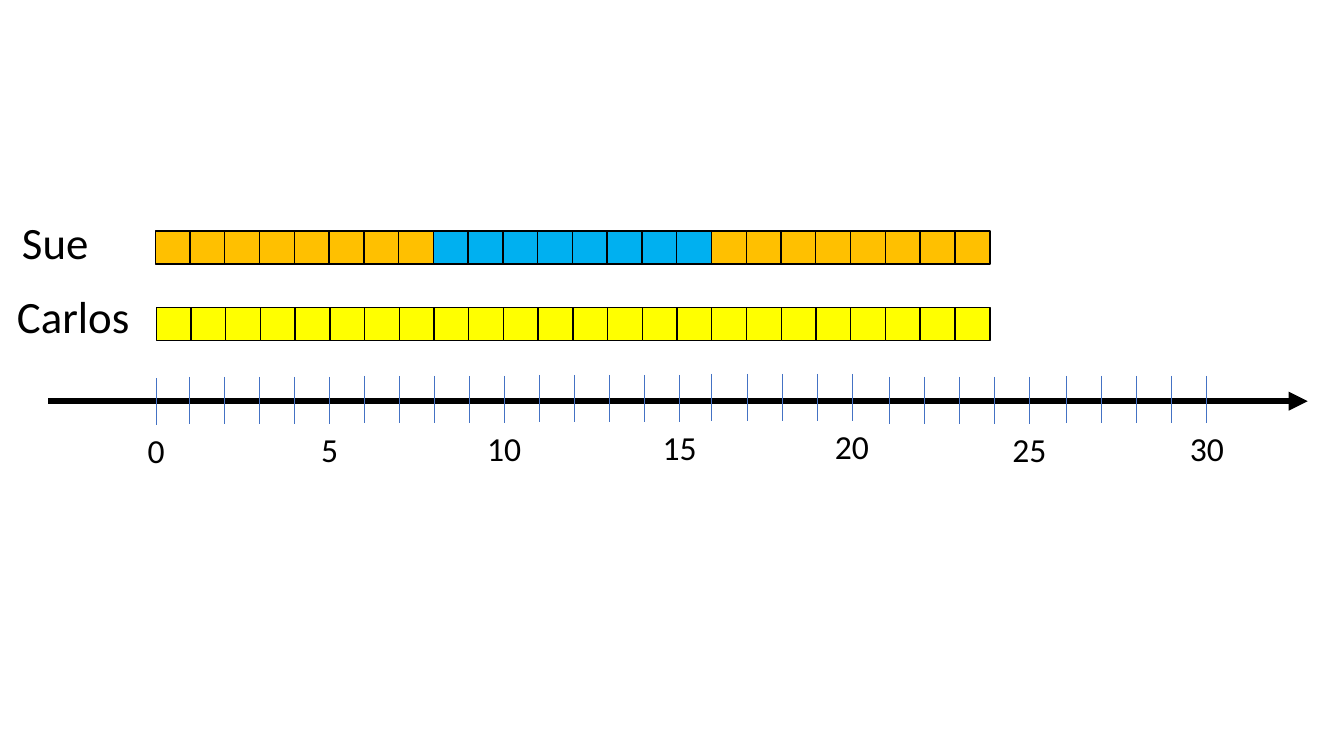
import pptx
import pptx.util
import lxml.etree
from pptx.dml.color import RGBColor
from pptx.enum.shapes import MSO_CONNECTOR, MSO_SHAPE
from pptx.enum.text import MSO_AUTO_SIZE, PP_ALIGN
from pptx.oxml.ns import qn
from pptx.util import Inches

BLACK = RGBColor(0x00, 0x00, 0x00)
TICK_BLUE = RGBColor(0x44, 0x72, 0xC4)
ORANGE = RGBColor(0xFF, 0xC0, 0x00)
SKY_BLUE = RGBColor(0x00, 0xB0, 0xF0)
YELLOW = RGBColor(0xFF, 0xFF, 0x00)
FONT = "Calibri"

# Content: name, label box, first and last square left, row top, (colour, count) runs
ROWS = [
    ("Carlos", (0.07, 2.82, 1.36, 0.64), 1.55, 9.47, 3.05, [(YELLOW, 24)]),
    ("Sue", (0.12, 2.08, 1.14, 0.64), 1.54, 9.47, 2.29,
     [(ORANGE, 8), (SKY_BLUE, 8), (ORANGE, 8)]),
]
# Tick groups: left and top of the first tick, number of ticks, number under the last
TICK_GROUPS = [
    (1.55, 3.75, 1, "0"),
    (1.88, 3.74, 5, "5"),
    (3.61, 3.73, 5, "10"),
    (5.35, 3.72, 5, "15"),
    (7.06, 3.71, 5, "20"),
    (8.82, 3.74, 5, "25"),
    (10.58, 3.73, 5, "30"),
]
GROUP_SPAN = 1.39
TICK_HEIGHT = 0.47
SQUARE_WIDTH, SQUARE_HEIGHT = 0.35, 0.33
NUMBER_WIDTH, NUMBER_HEIGHT = 0.6, 0.5
AXIS_START, AXIS_END, AXIS_Y = 0.48, 12.97, 3.98

presentation = pptx.Presentation()
presentation.slide_width = Inches(13.33)
presentation.slide_height = Inches(7.5)
slide = presentation.slides.add_slide(presentation.slide_layouts[6])


def add_label(text, box, size, alignment):
    frame = slide.shapes.add_textbox(*map(Inches, box)).text_frame
    frame.word_wrap = True
    frame.auto_size = MSO_AUTO_SIZE.SHAPE_TO_FIT_TEXT
    paragraph = frame.paragraphs[0]
    paragraph.alignment = alignment
    run = paragraph.add_run()
    run.text = text
    run.font.size = pptx.util.Pt(size)
    run.font.name = FONT
    run.font.color.rgb = BLACK


def add_line(start, end, color, width):
    connector = slide.shapes.add_connector(
        MSO_CONNECTOR.STRAIGHT, *map(Inches, start + end))
    connector.line.color.rgb = color
    connector.line.width = pptx.util.Pt(width)
    properties = connector._element.spPr
    lxml.etree.SubElement(properties, qn("a:effectLst"))
    return connector


def add_square(left, top, color):
    square = slide.shapes.add_shape(
        MSO_SHAPE.RECTANGLE, Inches(left), Inches(top),
        Inches(SQUARE_WIDTH), Inches(SQUARE_HEIGHT))
    square.shadow.inherit = False
    square.fill.solid()
    square.fill.fore_color.rgb = color
    square.line.color.rgb = BLACK
    square.line.width = pptx.util.Pt(1)


# Number line with its arrowhead
axis = add_line((AXIS_START, AXIS_Y), (AXIS_END, AXIS_Y), BLACK, 4.5)
lxml.etree.SubElement(axis.line._get_or_add_ln(), qn("a:tailEnd"), type="triangle")

# Ticks, with a number under the last of each group
for first, top, count, number in TICK_GROUPS:
    for index in range(count):
        x = first + index * GROUP_SPAN / 4
        add_line((x, top), (x, top + TICK_HEIGHT), TICK_BLUE, 0.5)
    add_label(number, (x - NUMBER_WIDTH / 2, top + TICK_HEIGHT,
                       NUMBER_WIDTH, NUMBER_HEIGHT), 24, PP_ALIGN.CENTER)

# Rows of unit squares with their names
for name, box, first, last, top, color_runs in ROWS:
    colors = [color for color, count in color_runs for _ in range(count)]
    pitch = (last - first) / (len(colors) - 1)
    for index, color in enumerate(colors):
        add_square(first + index * pitch, top, color)
    add_label(name, box, 32, PP_ALIGN.LEFT)

presentation.save("out.pptx")
